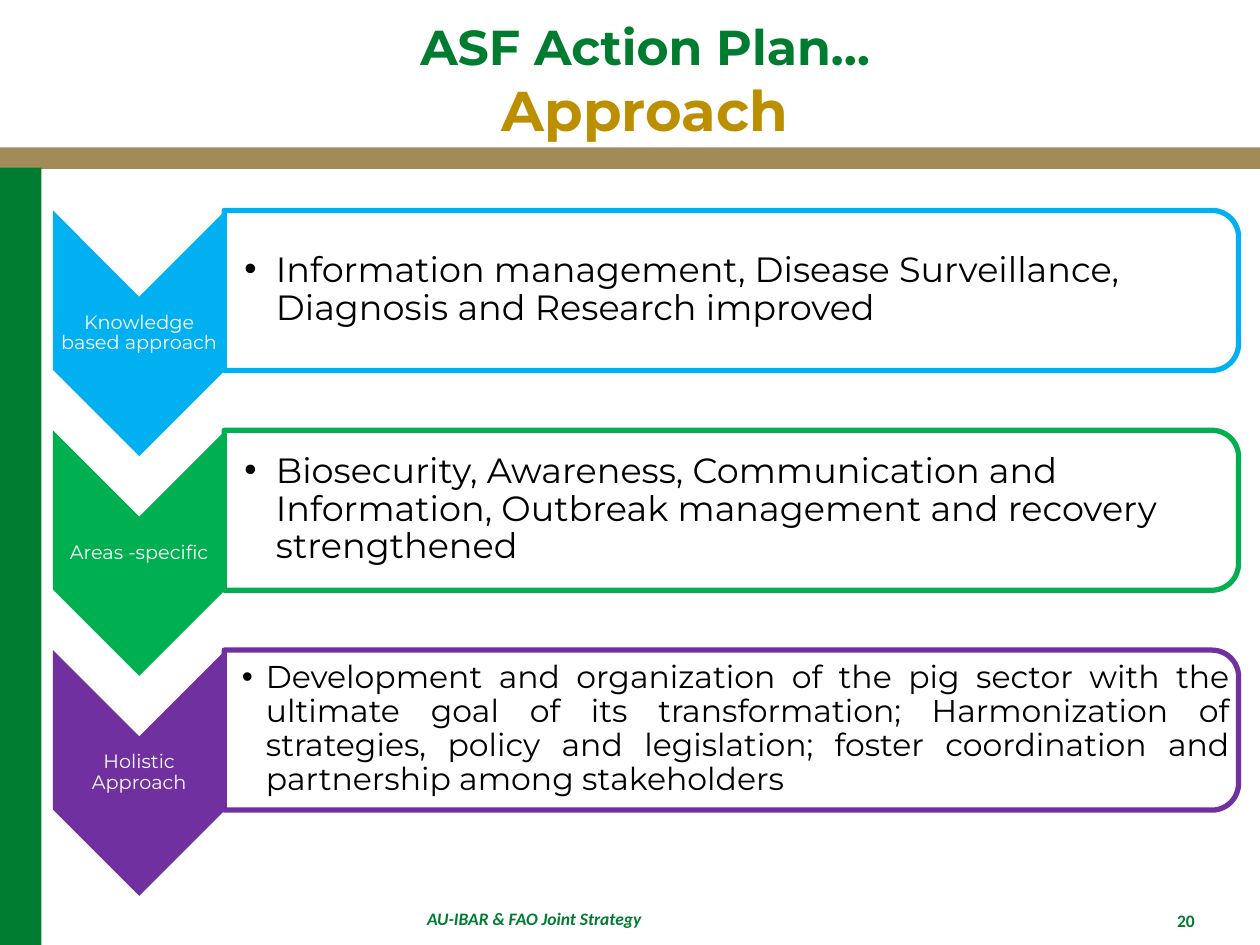
from dataclasses import dataclass

from lxml.etree import SubElement
from pptx import Presentation
from pptx.dml.color import RGBColor
from pptx.enum.shapes import MSO_SHAPE
from pptx.enum.text import MSO_ANCHOR, MSO_AUTO_SIZE, PP_ALIGN
from pptx.oxml.ns import qn
from pptx.util import Inches, Pt

GREEN = RGBColor(0x00, 0x7C, 0x30)
TAN = RGBColor(0xA2, 0x8B, 0x59)
GOLD = RGBColor(0xBC, 0x8F, 0x00)
BLUE = RGBColor(0x00, 0xB0, 0xF0)
LIME = RGBColor(0x00, 0xB0, 0x50)
PURPLE = RGBColor(0x70, 0x30, 0xA0)
WHITE = RGBColor(0xFF, 0xFF, 0xFF)
BLACK = RGBColor(0x00, 0x00, 0x00)

TOP = 1.67
PITCH = 3.49 / 2


@dataclass
class Box:
    x: float
    y: float
    w: float
    h: float

    def inches(self) -> list:
        return [Inches(v) for v in (self.x, self.y, self.w, self.h)]

    def turned(self) -> "Box":
        """Frame that covers this box once rotated by 90 degrees."""
        shift = (self.w - self.h) / 2
        return Box(self.x + shift, self.y - shift, self.h, self.w)


@dataclass
class Step:
    label: str
    text: str
    color: RGBColor
    size: int = 20
    indent: float = 0.25
    inset: float = 0.16
    align: PP_ALIGN = PP_ALIGN.LEFT


STEPS = [
    Step("Knowledge based approach",
         "Information management, Disease Surveillance, Diagnosis and "
         "Research improved", BLUE),
    Step("Areas -specific",
         "Biosecurity, Awareness, Communication and Information, Outbreak "
         "management and recovery strengthened", LIME),
    Step("Holistic Approach",
         "Development and organization of the pig sector with the ultimate "
         "goal of its transformation; Harmonization of strategies, policy and "
         "legislation; foster coordination and partnership among stakeholders",
         PURPLE, 18, 0.19, 0.14, PP_ALIGN.JUSTIFY),
]


def add_run(para, text: str, size: int, color: RGBColor, font="Montserrat",
            bold=False, italic=False) -> None:
    run = para.add_run()
    run.text = text
    style = run.font
    style.name, style.size = font, Pt(size)
    style.bold, style.italic = bold, italic
    style.color.rgb = color


def add_text(slide, box: Box, text: str, align=PP_ALIGN.CENTER,
             inset=None, **style):
    """Add a text box; a given left inset also centres and tightens it."""
    frame = slide.shapes.add_textbox(*box.inches()).text_frame
    frame.word_wrap = True
    para = frame.paragraphs[0]
    para.alignment = align
    if inset is not None:
        frame.vertical_anchor = MSO_ANCHOR.MIDDLE
        frame.margin_left = Inches(inset)
        frame.margin_top = frame.margin_right = Inches(0.01)
        frame.margin_bottom = Inches(0.01)
        para.line_spacing = 0.9
    add_run(para, text, **style)
    return para


def add_bullet(para, indent: float) -> None:
    props = para._p.get_or_add_pPr()
    props.set("marL", str(Inches(indent)))
    props.set("indent", str(-Inches(indent)))
    SubElement(props, qn("a:buFont")).set("typeface", "Arial")
    SubElement(props, qn("a:buChar")).set("char", "•")


def add_shape(slide, kind: MSO_SHAPE, box: Box, fill: RGBColor,
              line=None, turn=False) -> None:
    frame = box.turned() if turn else box
    shape = slide.shapes.add_shape(kind, *frame.inches())
    shape.rotation = 90 if turn else 0
    shape.shadow.inherit = False
    shape.fill.solid()
    shape.fill.fore_color.rgb = fill
    if line is None:
        shape.line.fill.background()
    else:
        shape.line.color.rgb = line
        shape.line.width = Pt(3)


def add_step(slide, step: Step, y: float) -> None:
    add_shape(slide, MSO_SHAPE.CHEVRON, Box(0.42, y, 1.37, 1.95),
              step.color, turn=True)
    add_text(slide, Box(0.42, y + 0.68, 1.37, 0.59), step.label,
             inset=0.01, size=11, color=WHITE)
    add_shape(slide, MSO_SHAPE.ROUND_2_SAME_RECTANGLE,
              Box(1.78, y, 8.05, 1.27), WHITE, step.color, turn=True)
    para = add_text(slide, Box(1.78, y + 0.06, 7.99, 1.14), step.text,
                    step.align, step.inset, size=step.size, color=BLACK)
    add_bullet(para, step.indent)


def set_title(slide) -> None:
    title = slide.shapes.title
    title.left, title.top, title.width, title.height = Box(
        1.33, 0.08, 7.58, 0.92).inches()
    frame = title.text_frame
    frame.auto_size = MSO_AUTO_SIZE.NONE
    frame.vertical_anchor = MSO_ANCHOR.TOP
    para = frame.paragraphs[0]
    para.alignment = PP_ALIGN.CENTER
    add_run(para, "ASF Action Plan…", 28, GREEN, bold=True)
    para.add_line_break()
    add_run(para, "Approach", 32, GOLD, bold=True)


def main() -> None:
    deck = Presentation()
    deck.slide_width, deck.slide_height = Inches(10), Inches(7.5)
    slide = deck.slides.add_slide(deck.slide_layouts[5])
    set_title(slide)
    add_shape(slide, MSO_SHAPE.RECTANGLE, Box(0, 1.17, 10, 0.17), TAN)
    add_shape(slide, MSO_SHAPE.RECTANGLE, Box(0, 1.33, 0.33, 6.17), GREEN)
    for i, step in enumerate(STEPS):
        add_step(slide, step, TOP + i * PITCH)
    foot = dict(size=10, color=GREEN, font="Calibri", bold=True)
    add_text(slide, Box(0.67, 7.16, 7.14, 0.32),
             "AU-IBAR & FAO Joint Strategy", italic=True, **foot)
    add_text(slide, Box(7.9, 7.17, 1.68, 0.32), "20", PP_ALIGN.RIGHT, **foot)
    deck.save("out.pptx")


if __name__ == "__main__":
    main()
